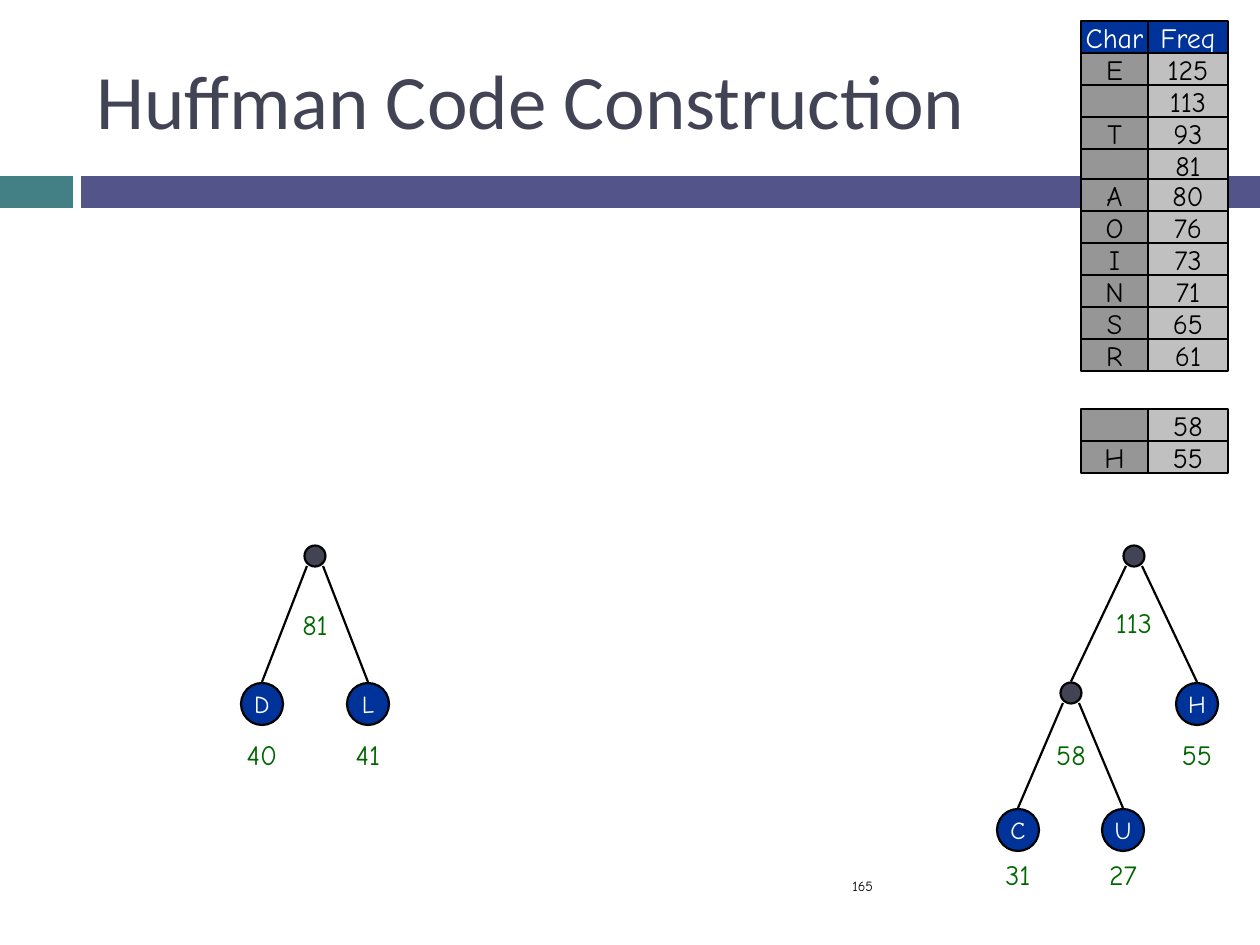
from pptx import Presentation
from pptx import util as u
from pptx.dml.color import RGBColor
from pptx.enum import shapes, text
from pptx.oxml.ns import qn
from lxml import etree

# Content; all lengths are px at 126 to the inch
TITLE = "Huffman Code Construction"
PAGE = "165"
# Frequency rows in blocks: top of the block, (character, frequency)
BLOCKS = [
    (21, [("Char", "Freq"), ("E", "125"), ("", "113"), ("T", "93"), ("", "81")]),
    (179, [("A", "80"), ("O", "76"), ("I", "73"), ("N", "71"), ("S", "65"), ("R", "61")]),
    (409, [("", "58"), ("H", "55")]),
]
# Tree nodes: letter (empty for a joint), weight, centre, label drop, children
TREES = [
    ("", "113", (1134, 556), 43, [
        ("", "58", (1071, 693), 38, [
            ("C", "31", (1018, 830), 21, []),
            ("U", "27", (1123, 830), 21, [])]),
        ("H", "55", (1197, 704), 27, [])]),
    ("", "81", (315, 556), 45, [
        ("D", "40", (262, 704), 27, []),
        ("L", "41", (368, 704), 27, [])]),
]

COLORS = dict(teal="438086", violet="53548A", slate="424456", blue="003399",
              green="006600", black="000000", white="FFFFFF",
              gray="969696", silver="C0C0C0")
HAND = "Comic Neue"
JOINT, LEAF = 21, 42
LABEL_W, LABEL_H = 84, 46
ROW_H, ROW_PITCH = 32, 32
COLUMNS = [(1081, 67, "gray"), (1148, 80, "silver")]


def px(n):
    return u.Emu(round(n * u.Inches(1) / 126))


def rgb(name):
    return RGBColor.from_string(COLORS[name])


def write(s, words, size, color, font=HAND, align="CENTER", anchor="MIDDLE", wrap=True):
    tf = s.text_frame
    frame = dict(word_wrap=wrap, auto_size=text.MSO_AUTO_SIZE.NONE,
                 vertical_anchor=text.MSO_ANCHOR[anchor])
    for key, value in frame.items():
        setattr(tf, key, value)
    p = tf.paragraphs[0]
    p.alignment = text.PP_ALIGN[align]
    r = p.add_run()
    r.text = words
    for key, value in dict(name=font, size=u.Pt(size)).items():
        setattr(r.font, key, value)
    r.font.color.rgb = rgb(color)


def add_shape(kind, x, y, w, h, fill, line=None):
    s = slide.shapes.add_shape(shapes.MSO_SHAPE[kind], px(x), px(y), px(w), px(h))
    s.shadow.inherit = False
    s.fill.solid()
    s.fill.fore_color.rgb = rgb(fill)
    if line:
        s.line.color.rgb = rgb("black")
        s.line.width = u.Pt(line)
    else:
        s.line.fill.background()
    return s


def add_text(x, y, w, h, words, size, color, **style):
    s = slide.shapes.add_textbox(px(x), px(y), px(w), px(h))
    write(s, words, size, color, **style)


def add_edge(x1, y1, x2, y2):
    s = slide.shapes.add_connector(shapes.MSO_CONNECTOR.STRAIGHT,
                                   px(x1), px(y1), px(x2), px(y2))
    s.line.color.rgb = rgb("black")
    s.line.width = u.Pt(1.25)
    etree.SubElement(s._element.spPr, qn("a:effectLst"))


def add_tree(node):
    letter, weight, (x, y), drop, children = node
    d = LEAF if letter else JOINT
    s = add_shape("OVAL", x - d / 2, y - d / 2, d, d, "blue" if letter else "slate", 1.25)
    if letter:
        write(s, letter, 14, "white", wrap=False)
    add_text(x - LABEL_W / 2, y + drop, LABEL_W, LABEL_H, weight, 16, "green", anchor="TOP")
    for child, side in zip(children, (-1, 1)):
        cx, cy = child[2]
        top = cy - (LEAF if child[0] else JOINT) / 2
        add_edge(x + side * 8, y + 10, cx, top - 1)
        add_tree(child)


prs = Presentation()
prs.slide_width, prs.slide_height = px(1260), px(945)
slide = prs.slides.add_slide(prs.slide_layouts[5])

# Title and page number
title = slide.shapes.title
title.left, title.top, title.width, title.height = map(px, (84, 31, 1124, 136))
write(title, TITLE, 44, "slate", font="Calibri", align="LEFT")
add_text(840, 861, 368, 50, PAGE, 8, "black", align="LEFT")

# Band below the title
add_shape("RECTANGLE", 0, 176, 73, 32, "teal")
add_shape("RECTANGLE", 81, 176, 1179, 32, "violet")

# Huffman trees
for tree in TREES:
    add_tree(tree)

# Frequency rows, loose cells so that rows can leave gaps
for top, rows in BLOCKS:
    for i, row in enumerate(rows):
        header = row[0] == "Char"
        for (x, w, fill), words in zip(COLUMNS, row):
            s = add_shape("RECTANGLE", x, top + i * ROW_PITCH, w, ROW_H,
                          "blue" if header else fill, 0.75)
            if words:
                write(s, words, 16, "white" if header else "black", wrap=False)

prs.save("out.pptx")
